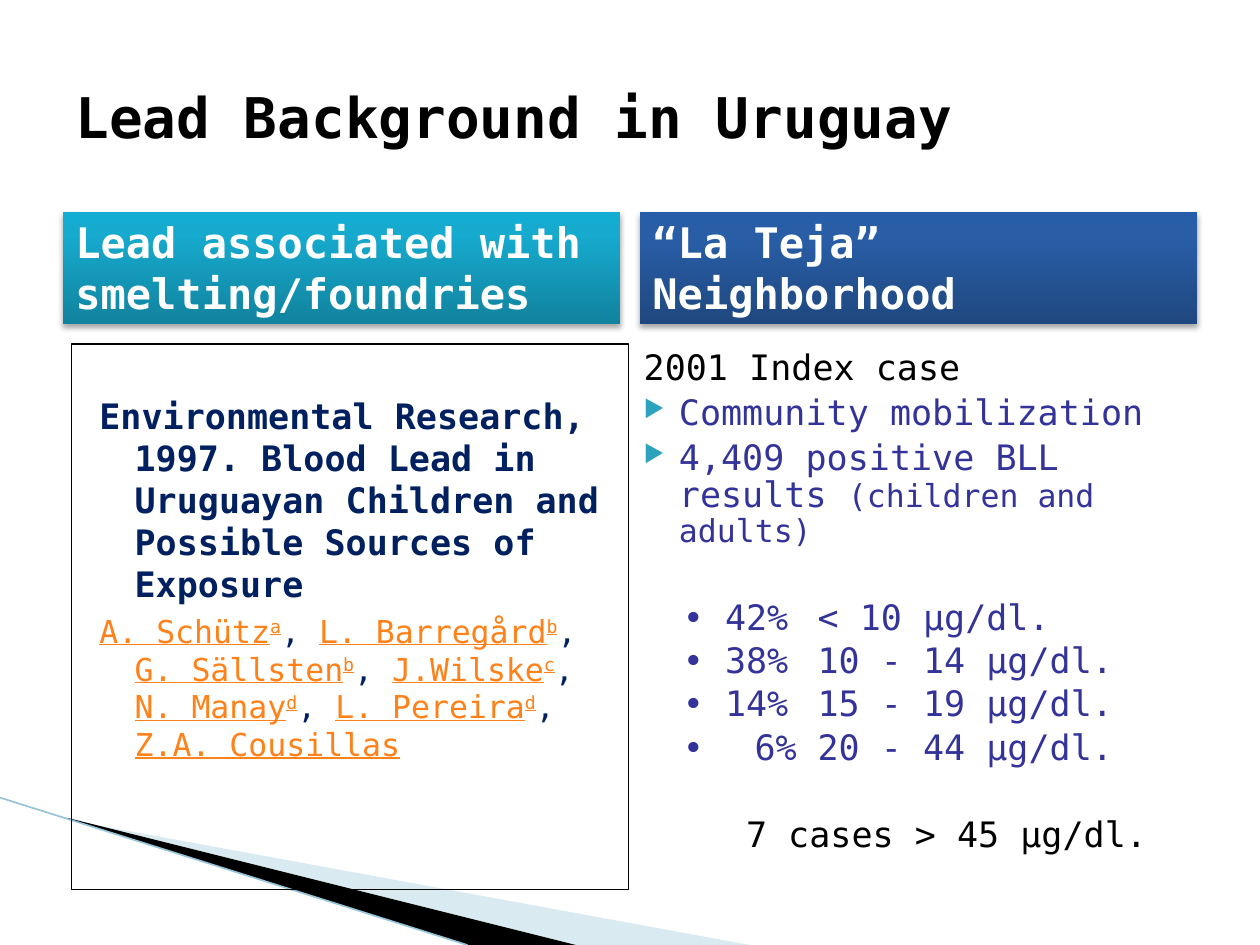
from dataclasses import dataclass

from lxml.etree import SubElement
from pptx import Presentation
from pptx.dml.color import RGBColor
from pptx.enum.shapes import MSO_CONNECTOR, MSO_SHAPE
from pptx.enum.text import MSO_ANCHOR as Anchor, PP_ALIGN as Align
from pptx.oxml.ns import qn
from pptx.util import Pt


@dataclass(frozen=True)
class Theme:
    font: str = "DejaVu Sans Mono"
    black: str = "000000"
    white: str = "FFFFFF"
    navy: str = "002060"
    violet: str = "333399"
    orange: str = "FF8119"
    bullet: str = "2DA2BF"
    pale: str = "A0CBDC"
    edge: str = "97C5D8"
    teal: tuple = ("11839F", "16AACE", "13ADD3")
    blue: tuple = ("1F4880", "295EA7", "265EAA")
    title: int = 32
    heading: int = 24
    body: int = 20
    small: int = 18


T = Theme()


@dataclass(frozen=True)
class Span:
    text: str
    color: str = T.black
    size: int = T.body
    bold: bool = False
    underline: bool = False
    raised: bool = False


@dataclass(frozen=True)
class Para:
    spans: tuple
    before: float = 4
    margin: float = 0
    indent: float = 0
    spacing: float = 1
    bullet: bool = False
    tabs: tuple = ()


@dataclass(frozen=True)
class Box:
    left: float
    top: float
    width: float
    height: float

    def lengths(self) -> tuple:
        return tuple(Pt(v) for v in (self.left, self.top, self.width, self.height))


@dataclass(frozen=True)
class Header:
    left: float
    text: str
    colors: tuple


@dataclass(frozen=True)
class Level:
    text: str
    columns: tuple


HEADERS = (
    Header(36, "Lead associated with smelting/foundries", T.teal),
    Header(365.76, "“La Teja” Neighborhood", T.blue),
)
LEVELS = (
    Level("• 42%\t< 10 µg/dl.", (11,)),
    Level("• 38%\t10 - 14 µg/dl.", (7,)),
    Level("• 14%\t15 - 19 µg/dl.", (7,)),
    Level("•\t6%\t20 - 44 µg/dl.", (4, 8)),
)
AUTHORS = (
    ("A. Schütz", "a"), ("L. Barregård", "b"), ("G. Sällsten", "b"), ("J.Wilske", "c"),
    ("N. Manay", "d"), ("L. Pereira", "d"), ("Z.A. Cousillas", ""),
)
HANGING = dict(margin=28.8, indent=-20.16)


def rgb(color: str) -> RGBColor:
    return RGBColor.from_string(color)


def column(count: int) -> float:
    """Return the place of a character column in the list of levels."""
    return 31 + 12.04 * count


def add_para(p, para: Para, first: bool) -> None:
    """Format one paragraph and its runs."""
    pPr = p._p.get_or_add_pPr()
    pPr.set("marL", str(Pt(para.margin)))
    pPr.set("indent", str(Pt(para.indent)))
    if para.bullet:
        SubElement(SubElement(pPr, qn("a:buClr")), qn("a:srgbClr"), val=T.bullet)
        SubElement(pPr, qn("a:buSzPct"), val="68000")
        SubElement(pPr, qn("a:buChar"), char="▶")
    if para.tabs:
        tabs = SubElement(pPr, qn("a:tabLst"))
        for tab in para.tabs:
            SubElement(tabs, qn("a:tab"), pos=str(Pt(tab)), algn="l")
    p.alignment = Align.LEFT
    p.line_spacing = para.spacing
    p.space_before = Pt(0 if first else para.before)
    for span in para.spans:
        r = p.add_run()
        r.text = span.text
        f = r.font
        f.name, f.size, f.bold = T.font, Pt(span.size), span.bold
        f.color.rgb = rgb(span.color)
        if span.underline:
            f.underline = True
        if span.raised:
            r._r.get_or_add_rPr().set("baseline", "30000")


def write(sp, paras: tuple, anchor=Anchor.TOP) -> None:
    """Fill a shape with paragraphs."""
    tf = sp.text_frame
    tf.word_wrap = True
    tf.vertical_anchor = anchor
    for i, para in enumerate(paras):
        add_para(tf.add_paragraph() if i else tf.paragraphs[0], para, i == 0)


def add_text(s, box: Box, paras: tuple, anchor=Anchor.TOP) -> None:
    write(s.shapes.add_textbox(*box.lengths()), paras, anchor)


def add_rect(s, box: Box):
    sp = s.shapes.add_shape(MSO_SHAPE.RECTANGLE, *box.lengths())
    sp.shadow.inherit = False
    return sp


def add_header(s, header: Header) -> None:
    """Draw a column header with a gradient and a soft shadow."""
    sp = add_rect(s, Box(header.left, 120.96, 318.24, 64.08))
    sp.line.fill.background()
    sp.fill.gradient()
    sp.fill.gradient_angle = 90
    spPr = sp._element.spPr
    stops = spPr.find(qn("a:gradFill")).find(qn("a:gsLst"))
    for stop in list(stops):
        stops.remove(stop)
    for pos, color in zip((0, 80000, 100000), header.colors):
        SubElement(SubElement(stops, qn("a:gs"), pos=str(pos)), qn("a:srgbClr"), val=color)
    shadow = SubElement(spPr.find(qn("a:effectLst")), qn("a:outerShdw"), blurRad=str(Pt(3.1)),
                        dist=str(Pt(1.8)), dir="5400000", rotWithShape="0")
    SubElement(SubElement(shadow, qn("a:srgbClr"), val=T.black), qn("a:alpha"), val="35000")
    write(sp, (Para((Span(header.text, T.white, T.heading, bold=True),)),), Anchor.BOTTOM)


def add_wedge(s, points: tuple, color: str, opacity: int = 100) -> None:
    """Draw one wedge of the corner ornament."""
    fb = s.shapes.build_freeform(Pt(points[0][0]), Pt(points[0][1]))
    fb.add_line_segments([(Pt(x), Pt(y)) for x, y in points[1:]])
    sp = fb.convert_to_shape()
    sp.shadow.inherit = False
    sp.line.fill.background()
    sp.fill.solid()
    sp.fill.fore_color.rgb = rgb(color)
    if opacity < 100:
        clr = sp._element.spPr.find(qn("a:solidFill"))[0]
        SubElement(clr, qn("a:alpha"), val=str(opacity * 1000))


def add_edge(s) -> None:
    ln = s.shapes.add_connector(MSO_CONNECTOR.STRAIGHT, Pt(0), Pt(455.8), Pt(267.1), Pt(540))
    ln.line.color.rgb = rgb(T.edge)
    ln.line.width = Pt(0.95)
    SubElement(ln._element.spPr, qn("a:effectLst"))


def author_spans() -> tuple:
    """Return linked-looking names with raised marks, parted by commas."""
    spans = []
    for name, mark in AUTHORS:
        if spans:
            spans.append(Span(", ", T.navy, T.small))
        spans.append(Span(name, T.orange, T.small, underline=True))
        if mark:
            spans.append(Span(mark, T.orange, T.small, underline=True, raised=True))
    return tuple(spans)


def add_study(s) -> None:
    sp = add_rect(s, Box(41.04, 196.56, 318.24, 311.76))
    sp.fill.background()
    sp.line.color.rgb = rgb(T.black)
    sp.line.width = Pt(0.75)
    sp.text_frame.margin_top = Pt(29)
    study = ("Environmental Research, 1997. Blood Lead in Uruguayan Children "
             "and Possible Sources of Exposure")
    write(sp, (Para((Span(study, T.navy, bold=True),), **HANGING),
               Para(author_spans(), **HANGING)))


def add_findings(s) -> None:
    """Write the index case, its follow-up and the blood lead levels."""
    item = dict(HANGING, spacing=0.9, bullet=True)
    paras = [
        Para((Span("2001 Index case"),), spacing=0.9, **HANGING),
        Para((Span("Community mobilization", T.violet),), **item),
        Para((Span("4,409 positive BLL results ", T.violet),
              Span("(children and adults)", T.violet, T.small)), **item),
    ]
    for i, level in enumerate(LEVELS):
        paras.append(Para((Span(level.text, T.violet),), before=3.2 if i else 28.8,
                          indent=column(0), spacing=0.9,
                          tabs=tuple(column(n) for n in level.columns)))
    paras.append(Para((Span("7 cases > 45 µg/dl."),), before=28, indent=column(3), spacing=0.9))
    add_text(s, Box(352.08, 196.56, 337.68, 311.04), tuple(paras))


def main() -> None:
    prs = Presentation()
    prs.slide_width, prs.slide_height = Pt(720), Pt(540)
    s = prs.slides.add_slide(prs.slide_layouts[6])
    add_wedge(s, ((39.6, 468.7), (428.4, 540), (328.3, 540), (39.6, 468)), T.pale, 40)
    add_wedge(s, ((38.2, 467.3), (329, 540), (267.8, 540), (38.9, 468)), T.black)
    add_edge(s)
    title = Span("Lead Background in Uruguay", size=T.title, bold=True)
    add_text(s, Box(36, 10.08, 648, 113.04), (Para((title,)),), Anchor.MIDDLE)
    for header in HEADERS:
        add_header(s, header)
    add_findings(s)
    add_study(s)
    prs.save("out.pptx")


if __name__ == "__main__":
    main()
